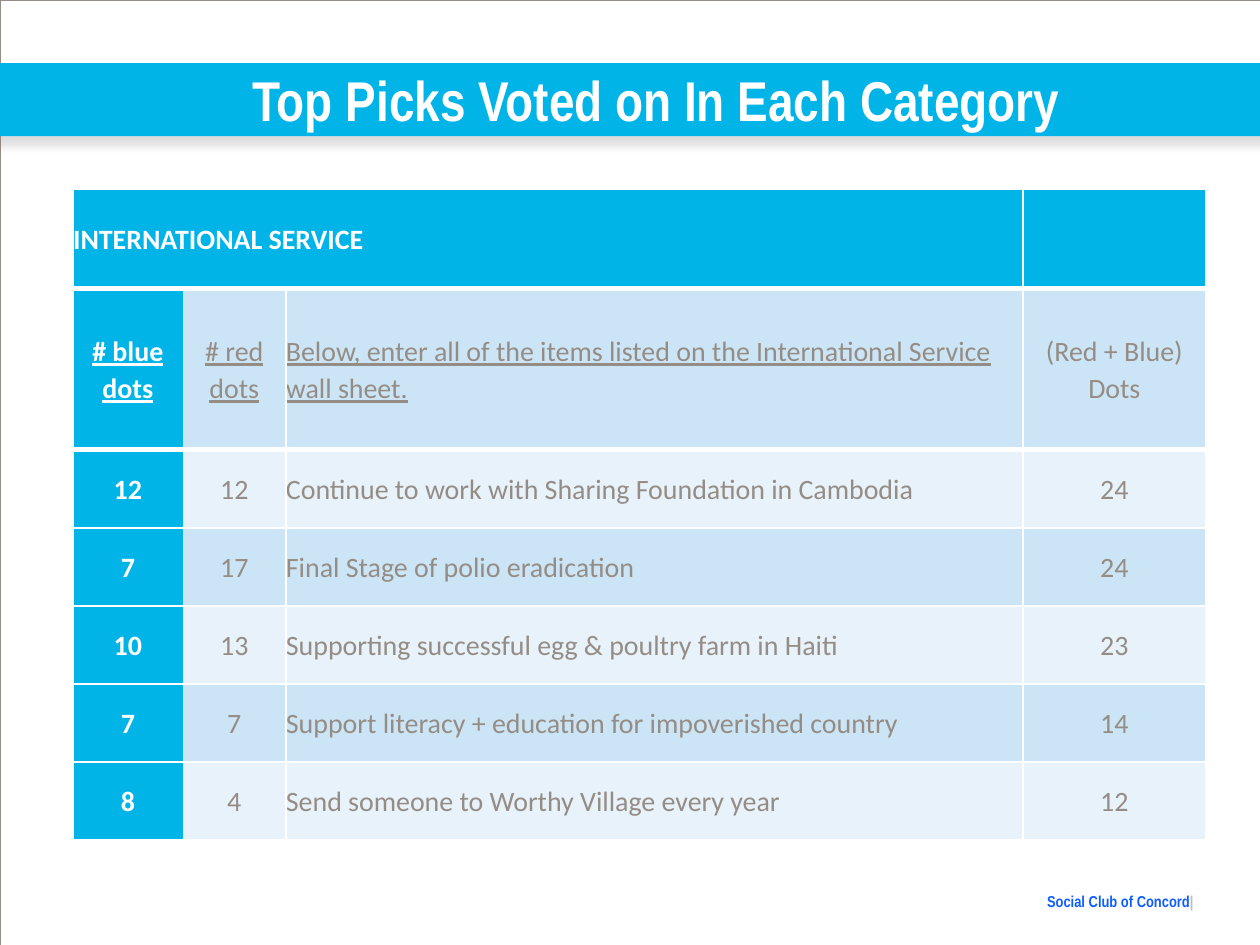
"""Build the slide listing the top picks voted for in International Service."""
from lxml import etree
from pptx import Presentation
from pptx import util as u
from pptx.dml.color import RGBColor
from pptx.enum import shapes, text
from pptx.oxml import parse_xml
from pptx.oxml.ns import nsdecls, qn

PX = 9144
CYAN = RGBColor(0x01, 0xB4, 0xE7)
LIGHT = RGBColor(0xCB, 0xE5, 0xF6)
PALE = RGBColor(0xE7, 0xF2, 0xFA)
WHITE = RGBColor(0xFF, 0xFF, 0xFF)
TAUPE = RGBColor(0x95, 0x8D, 0x85)
BLUE = RGBColor(0x0E, 0x5E, 0xFF)
GRAY = RGBColor(0xBC, 0xBD, 0xC0)

COLUMNS = [87, 82, 585, 145]
ROWS = [79, 128] + [62] * 5
CONTENT = [
    ["INTERNATIONAL SERVICE", "", "", ""],
    ["# blue dots", "# red dots",
     "Below, enter all of the items listed on the International Service wall sheet.",
     "(Red + Blue) Dots"],
    ["12", "12", "Continue to work with Sharing Foundation in Cambodia", "24"],
    ["7", "17", "Final Stage of polio eradication", "24"],
    ["10", "13", "Supporting successful egg & poultry farm in Haiti", "23"],
    ["7", "7", "Support literacy + education for impoverished country", "14"],
    ["8", "4", "Send someone to Worthy Village every year", "12"],
]


def style(font, name, size, color, bold):
    font.name = name
    font.size = u.Pt(size)
    font.color.rgb = color
    font.bold = bold


def add_text_frame(slide, left, top, width, height):
    frame = slide.shapes.add_textbox(left * PX, top * PX, width * PX, height * PX).text_frame
    frame.margin_left = frame.margin_right = frame.margin_top = frame.margin_bottom = 0
    frame.word_wrap = True
    return frame


deck = Presentation()
deck.slide_width = 1000 * PX
deck.slide_height = 750 * PX
slide = deck.slides.add_slide(deck.slide_layouts[6])

footer = add_text_frame(slide, 775, 708, 175, 14)
footer.auto_size = text.MSO_AUTO_SIZE.SHAPE_TO_FIT_TEXT
footer.paragraphs[0].alignment = text.PP_ALIGN.RIGHT
for words, color in [("Social Club of Concord", BLUE), ("| ", GRAY)]:
    run = footer.paragraphs[0].add_run()
    run.text = words
    style(run.font, "Arial Narrow", 9, color, True)

frame_line = slide.shapes.add_shape(shapes.MSO_SHAPE.RECTANGLE, 0, 0, 1000 * PX, 750 * PX)
frame_line.shadow.inherit = False
frame_line.fill.background()
frame_line.line.color.rgb = TAUPE
frame_line.line.width = u.Pt(0.25)

band = slide.shapes.add_shape(shapes.MSO_SHAPE.RECTANGLE, -8 * PX, 50 * PX, 1017 * PX, 58 * PX)
band.shadow.inherit = False
band.fill.solid()
band.fill.fore_color.rgb = CYAN
band.line.fill.background()
effects = band._element.spPr.find(qn("a:effectLst"))
effects.append(parse_xml(
    f'<a:outerShdw {nsdecls("a")} blurRad="{u.Pt(5)}" dist="{u.Pt(4.8)}" dir="5400000" '
    'algn="t" rotWithShape="0"><a:srgbClr val="808080"><a:alpha val="25000"/>'
    '</a:srgbClr></a:outerShdw>'))

title = add_text_frame(slide, 42, 50, 958, 58)
title.vertical_anchor = text.MSO_ANCHOR.MIDDLE
title.text = "Top Picks Voted on In Each Category"
title.paragraphs[0].alignment = text.PP_ALIGN.CENTER
style(title.paragraphs[0].runs[0].font, "Arial Narrow", 32, WHITE, True)

votes = slide.shapes.add_table(
    len(ROWS), len(COLUMNS), 58 * PX, 150 * PX, sum(COLUMNS) * PX, sum(ROWS) * PX).table
votes.horz_banding = False
votes.first_row = False
for column, width in zip(votes.columns, COLUMNS):
    column.width = width * PX
for row, height in zip(votes.rows, ROWS):
    row.height = height * PX
votes.cell(0, 0).merge(votes.cell(0, 2))

for r, entries in enumerate(CONTENT):
    for c, entry in enumerate(entries):
        cell = votes.cell(r, c)
        cell.margin_left = cell.margin_right = cell.margin_top = cell.margin_bottom = 0
        cell.vertical_anchor = text.MSO_ANCHOR.MIDDLE
        accent = r == 0 or c == 0
        borders = {"L": 0 if c == 1 else 1, "R": 0 if c == 0 else 1,
                   "T": 3 if r in (1, 2) else 1, "B": 3 if r < 2 else 1}
        for side, points in borders.items():
            edge = etree.SubElement(
                cell._tc.get_or_add_tcPr(), qn(f"a:ln{side}"), w=str(u.Pt(points)))
            if points:
                paint = etree.SubElement(edge, qn("a:solidFill"))
                etree.SubElement(paint, qn("a:srgbClr"), val=str(WHITE))
            else:
                etree.SubElement(edge, qn("a:noFill"))
        cell.fill.solid()
        cell.fill.fore_color.rgb = CYAN if accent else LIGHT if r % 2 else PALE
        if entry:
            cell.text_frame.text = entry
            paragraph = cell.text_frame.paragraphs[0]
            paragraph.line_spacing = 1.07
            left_aligned = r == 0 or c == 2
            paragraph.alignment = text.PP_ALIGN.LEFT if left_aligned else text.PP_ALIGN.CENTER
            font = paragraph.runs[0].font
            style(font, "Calibri", 16, WHITE if accent else TAUPE, accent)
            font.underline = r == 1 and c < 3

deck.save("out.pptx")
